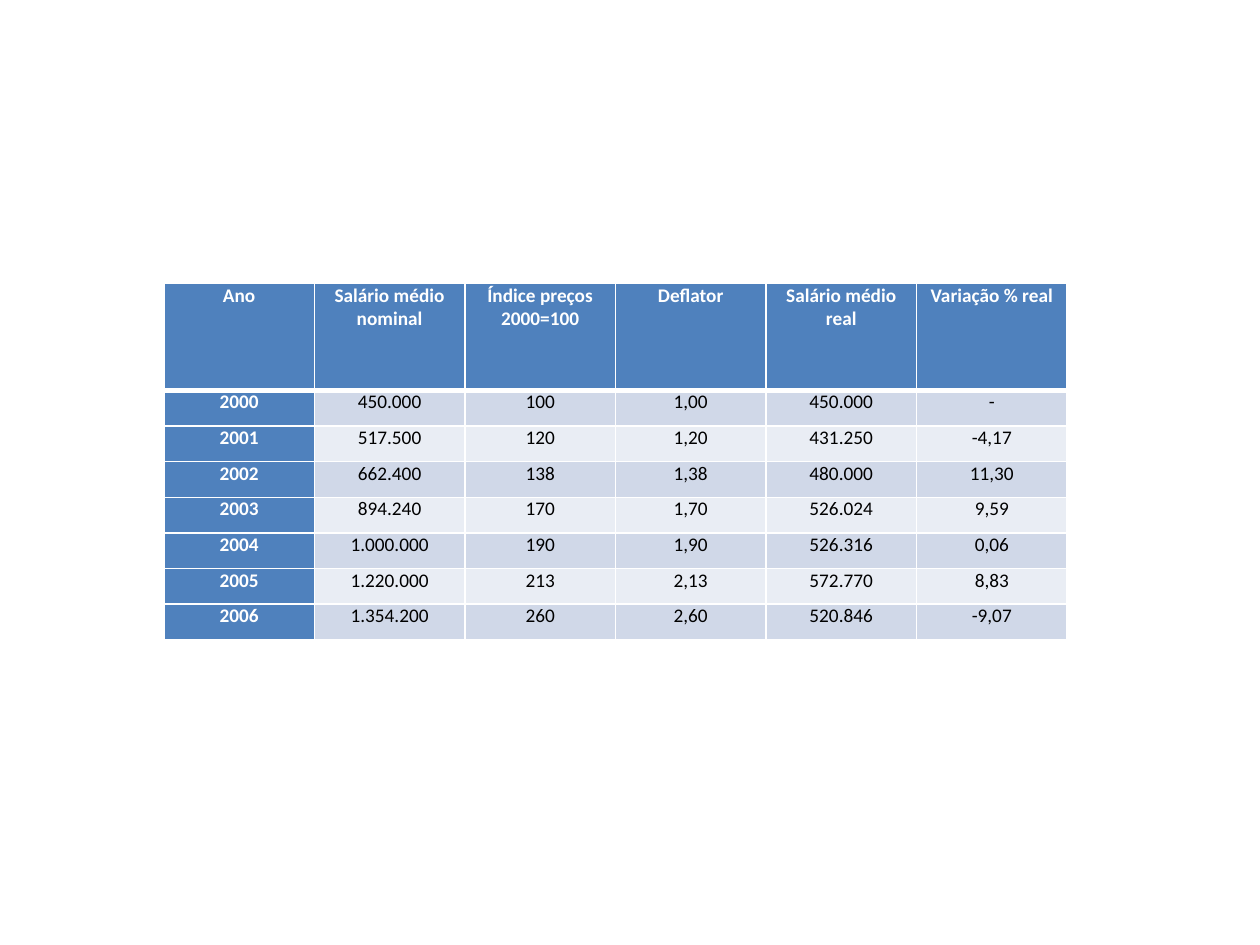
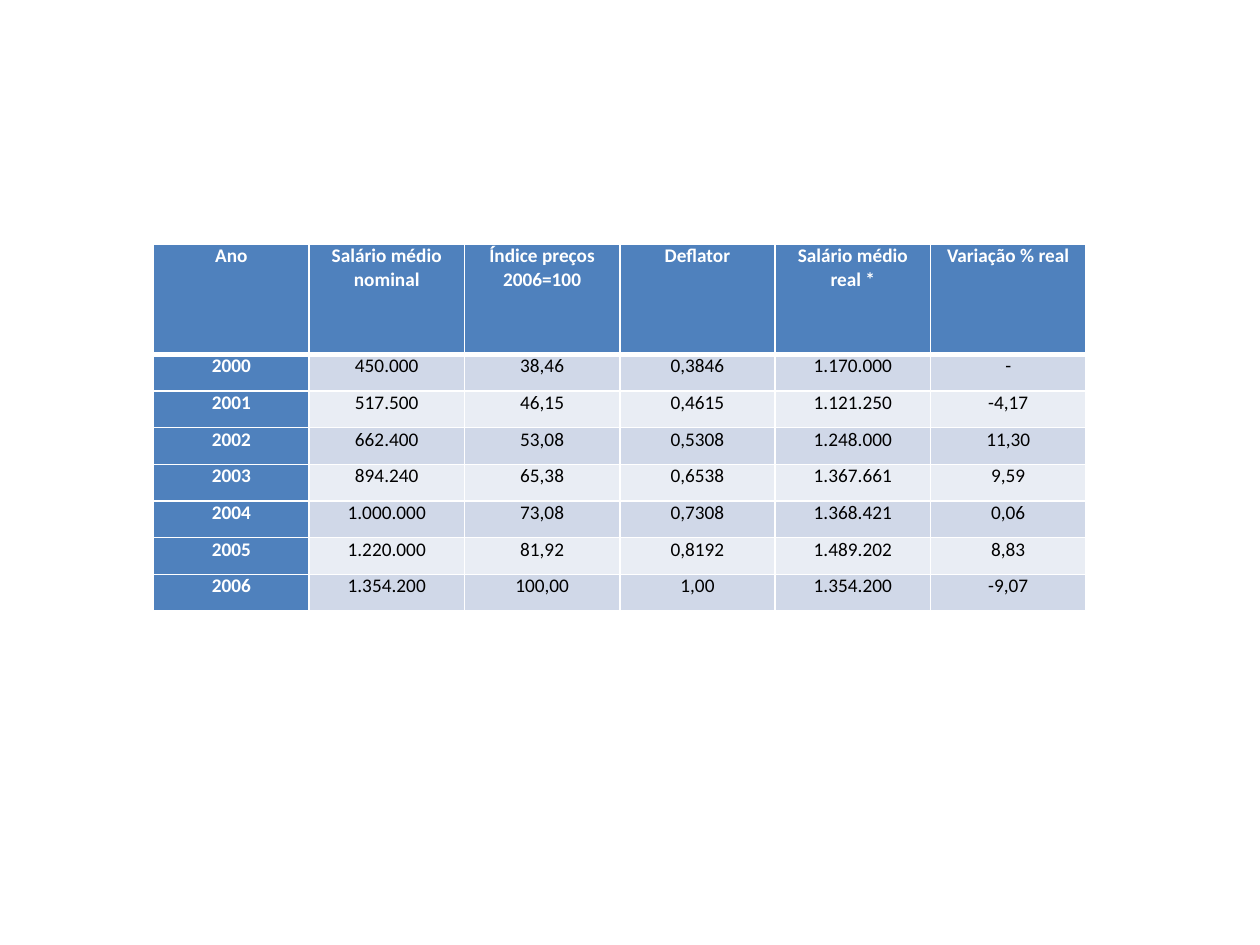
from lxml import etree
from pptx import Presentation
from pptx.dml.color import RGBColor
from pptx.enum.text import PP_ALIGN
from pptx.oxml.ns import qn
from pptx.util import Inches, Pt

CENTER = PP_ALIGN.CENTER
COLORS = {"head": "4F81BD", "odd": "D0D8E8", "even": "E9EDF4",
          "light": "FFFFFF", "dark": "000000"}
FONT, TEXT_SIZE = "Calibri", Pt(11)
BLANK_LAYOUT = 6
HEADER_UNITS = 3  # the header row is as tall as three data rows

# Columns that both tables share
years = ["2000", "2001", "2002", "2003", "2004", "2005", "2006"]
nominal_wages = ["450.000", "517.500", "662.400", "894.240",
                 "1.000.000", "1.220.000", "1.354.200"]
real_changes = ["-", "-4,17", "11,30", "9,59", "0,06", "8,83", "-9,07"]

# One entry per slide: place in inches and the columns that depend on the base year
wage_tables = [
    {"at": (1.3, 2.25, 7.17, 2.83), "base": "2000", "real_title": "Salário médio real",
     "indexes": ["100", "120", "138", "170", "190", "213", "260"],
     "deflators": ["1,00", "1,20", "1,38", "1,70", "1,90", "2,13", "2,60"],
     "real_wages": ["450.000", "431.250", "480.000", "526.024",
                    "526.316", "572.770", "520.846"]},
    {"at": (1.22, 1.94, 7.4, 2.91), "base": "2006", "real_title": "Salário médio real *",
     "indexes": ["38,46", "46,15", "53,08", "65,38", "73,08", "81,92", "100,00"],
     "deflators": ["0,3846", "0,4615", "0,5308", "0,6538", "0,7308", "0,8192", "1,00"],
     "real_wages": ["1.170.000", "1.121.250", "1.248.000", "1.367.661",
                    "1.368.421", "1.489.202", "1.354.200"]},
]


def add_borders(cell, widths):
    """Draw white borders; widths are points for left, right, top, bottom."""
    properties = cell._tc.get_or_add_tcPr()
    for side, width in zip("LRTB", widths):
        line = etree.SubElement(properties, qn(f"a:ln{side}"), w=str(Pt(width)))
        fill = etree.SubElement(line, qn("a:solidFill"))
        etree.SubElement(fill, qn("a:srgbClr"), val=COLORS["light"])


def style_cell(cell, text, row, column):
    is_heading = row == 0 or column == 0
    # A thick rule separates the header from the data
    add_borders(cell, (1, 1, 3 if row == 1 else 1, 3 if row == 0 else 1))
    band = "head" if is_heading else "odd" if row % 2 else "even"
    cell.fill.solid()
    cell.fill.fore_color.rgb = RGBColor.from_string(COLORS[band])
    cell.margin_left = cell.margin_right = Inches(0.07)
    cell.margin_top = cell.margin_bottom = 0
    paragraph = cell.text_frame.paragraphs[0]
    paragraph.alignment = CENTER
    run = paragraph.add_run()
    run.text = text
    run.font.name, run.font.size, run.font.bold = FONT, TEXT_SIZE, is_heading
    run.font.color.rgb = RGBColor.from_string(COLORS["light" if is_heading else "dark"])


prs = Presentation()
prs.slide_width, prs.slide_height = Inches(10), Inches(7.5)

for wages in wage_tables:
    slide = prs.slides.add_slide(prs.slide_layouts[BLANK_LAYOUT])

    # Header and data rows
    header = ["Ano", "Salário médio nominal", f"Índice preços {wages['base']}=100",
              "Deflator", wages["real_title"], "Variação % real"]
    rows = [header, *zip(years, nominal_wages, wages["indexes"], wages["deflators"],
                         wages["real_wages"], real_changes)]

    # Equal columns, and a header three units tall
    left, top, width, height = (Inches(length) for length in wages["at"])
    table = slide.shapes.add_table(len(rows), len(header), left, top, width, height).table
    for column in table.columns:
        column.width = width // len(header)
    unit = height // (HEADER_UNITS + len(years))
    for number, table_row in enumerate(table.rows):
        table_row.height = unit * (1 if number else HEADER_UNITS)

    for row, texts in enumerate(rows):
        for column, text in enumerate(texts):
            style_cell(table.cell(row, column), text, row, column)

prs.save("out.pptx")
